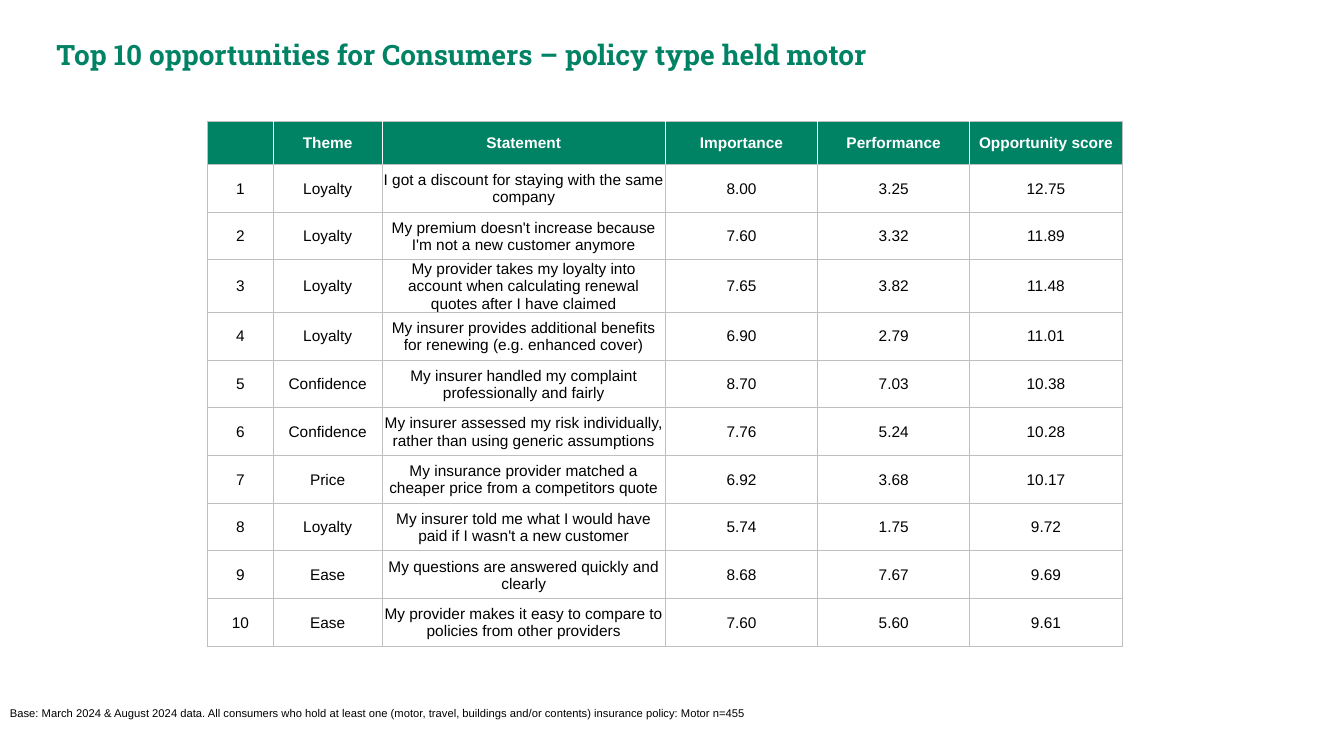
from lxml.etree import SubElement
from pptx import Presentation
from pptx.dml.color import RGBColor
from pptx.enum.text import MSO_ANCHOR, PP_ALIGN
from pptx.oxml.ns import qn
from pptx.util import Inches, Pt

GREEN, WHITE, BLACK, GREY = "008265", "FFFFFF", "000000", "BFBFBF"

HEADINGS = ["", "Theme", "Statement", "Importance", "Performance", "Opportunity score"]
OPPORTUNITIES = [
    ("Loyalty", "I got a discount for staying with the same company", "8.00", "3.25", "12.75"),
    ("Loyalty", "My premium doesn't increase because I'm not a new customer anymore",
     "7.60", "3.32", "11.89"),
    ("Loyalty", "My provider takes my loyalty into account when calculating renewal "
     "quotes after I have claimed", "7.65", "3.82", "11.48"),
    ("Loyalty", "My insurer provides additional benefits for renewing (e.g. enhanced cover)",
     "6.90", "2.79", "11.01"),
    ("Confidence", "My insurer handled my complaint professionally and fairly",
     "8.70", "7.03", "10.38"),
    ("Confidence", "My insurer assessed my risk individually, rather than using generic assumptions",
     "7.76", "5.24", "10.28"),
    ("Price", "My insurance provider matched a cheaper price from a competitors quote",
     "6.92", "3.68", "10.17"),
    ("Loyalty", "My insurer told me what I would have paid if I wasn't a new customer",
     "5.74", "1.75", "9.72"),
    ("Ease", "My questions are answered quickly and clearly", "8.68", "7.67", "9.69"),
    ("Ease", "My provider makes it easy to compare to policies from other providers",
     "7.60", "5.60", "9.61"),
]
COLUMN_WIDTHS = [0.65, 1.08, 2.81, 1.51, 1.51, 1.51]
HEADER_HEIGHT, TABLE_HEIGHT = 0.43, 5.17


def add_span(para, text, size, font, colour, bold=False):
    span = para.add_run()
    span.text = text
    span.font.size = Pt(size)
    span.font.name = font
    span.font.bold = bold
    span.font.color.rgb = RGBColor.from_string(colour)


def add_border(cell, side, colour, width):
    """Draw one cell edge; call in the order L, R, T, B and before filling."""
    line = SubElement(cell._tc.get_or_add_tcPr(), qn(f"a:ln{side}"), w=str(Pt(width)))
    SubElement(SubElement(line, qn("a:solidFill")), qn("a:srgbClr"), val=colour)


deck = Presentation()
deck.slide_width, deck.slide_height = Inches(13.33), Inches(7.5)
page = deck.slides.add_slide(deck.slide_layouts[5])

# Title
title = page.shapes.title
title.left, title.top = Inches(0.46), Inches(0.32)
title.width, title.height = Inches(12.28), Inches(0.44)
title.text_frame.vertical_anchor = MSO_ANCHOR.MIDDLE
title_para = title.text_frame.paragraphs[0]
title_para.alignment = PP_ALIGN.LEFT
add_span(title_para, "Top 10 opportunities for Consumers – policy type held motor",
         20, "Roboto Slab", GREEN, bold=True)

# Ranking table
rows = [HEADINGS] + [(str(rank), *entry) for rank, entry in enumerate(OPPORTUNITIES, 1)]
table = page.shapes.add_table(
    len(rows), len(HEADINGS), Inches(2.06), Inches(1.2),
    Inches(sum(COLUMN_WIDTHS)), Inches(TABLE_HEIGHT)).table
table.horz_banding = False
for column, width in zip(table.columns, COLUMN_WIDTHS):
    column.width = Inches(width)

last_column = len(HEADINGS) - 1
for row_index, texts in enumerate(rows):
    is_header = row_index == 0
    body_height = (TABLE_HEIGHT - HEADER_HEIGHT) / len(OPPORTUNITIES)
    table.rows[row_index].height = Inches(HEADER_HEIGHT if is_header else body_height)
    for column_index, text in enumerate(texts):
        cell = table.cell(row_index, column_index)
        cell.margin_left = cell.margin_right = cell.margin_top = Inches(0.01)
        cell.margin_bottom = 0
        cell.vertical_anchor = MSO_ANCHOR.MIDDLE
        outer_side = {0: "L", last_column: "R"}.get(column_index)
        for side in "LRTB":
            is_divider = is_header and side in "LR" and side != outer_side
            add_border(cell, side, *((WHITE, 1) if is_divider else (GREY, 0.75)))
        if is_header:
            cell.fill.solid()
            cell.fill.fore_color.rgb = RGBColor.from_string(GREEN)
        else:
            cell.fill.background()
        para = cell.text_frame.paragraphs[0]
        para.alignment = PP_ALIGN.CENTER
        if text:
            add_span(para, text, 11, "Arial", WHITE if is_header else BLACK, is_header)

# Base note
note = page.shapes.add_textbox(0, Inches(6.96), Inches(10.9), Inches(0.54))
note.text_frame.word_wrap = True
add_span(note.text_frame.paragraphs[0],
         "Base: March 2024 & August 2024 data. All consumers who hold at least one "
         "(motor, travel, buildings and/or contents) insurance policy: Motor n=455",
         8, "Arial", BLACK)

deck.save("out.pptx")
